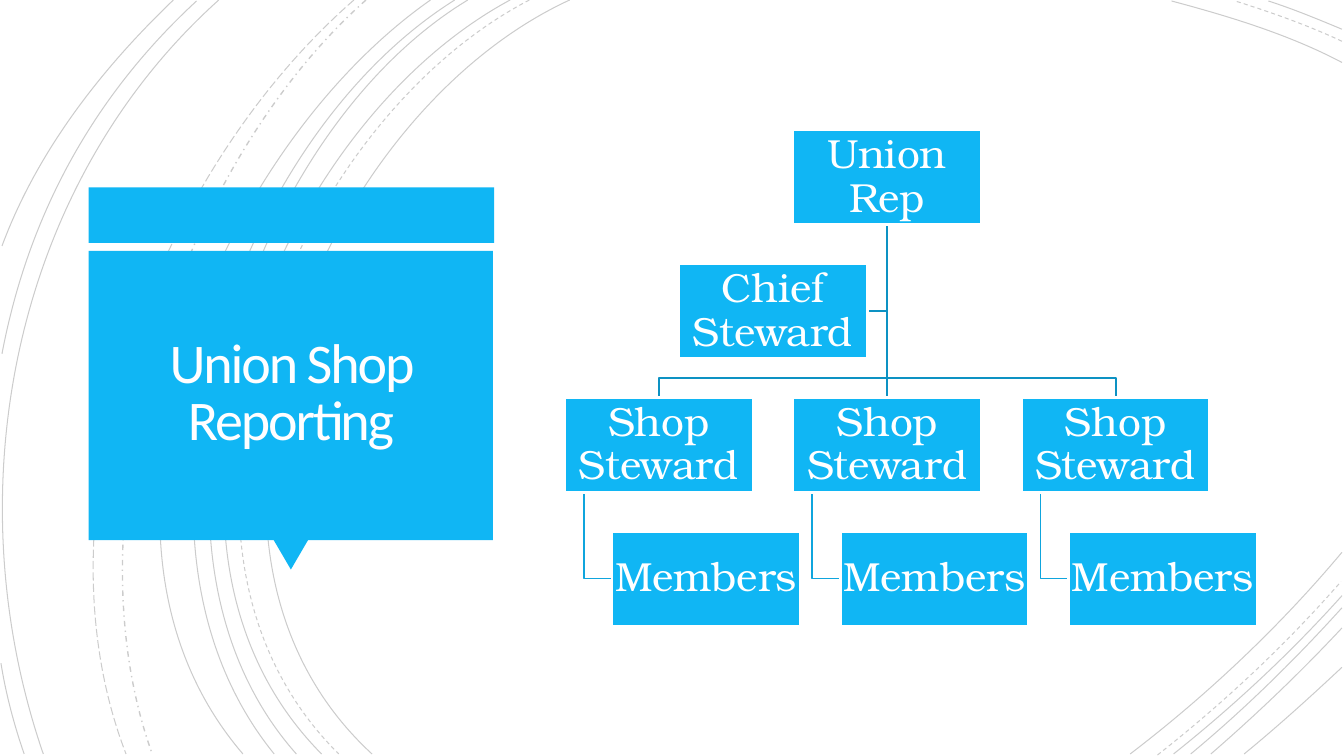
from dataclasses import dataclass

from lxml.etree import SubElement
from pptx import Presentation
from pptx.dml.color import RGBColor
from pptx.enum.dml import MSO_LINE
from pptx.enum.shapes import MSO_SHAPE
from pptx.enum.text import MSO_ANCHOR, MSO_AUTO_SIZE, PP_ALIGN
from pptx.oxml.ns import qn
from pptx.shapes.autoshape import Shape
from pptx.slide import Slide
from pptx.text.text import TextFrame
from pptx.util import Inches, Pt

SKY = RGBColor(0x10, 0xB6, 0xF4)
TRUNK = RGBColor(0x0D, 0x92, 0xC3)
BRANCH = RGBColor(0x0F, 0xA5, 0xDD)
WHITE = RGBColor(0xFF, 0xFF, 0xFF)
TITLE_WHITE = RGBColor(0xFF, 0xFE, 0xFF)
BLACK = RGBColor(0, 0, 0)

Point = tuple[float, float]

NODE_WIDTH, NODE_HEIGHT = 1.87, 0.94
CHART_LEFT, CHART_TOP = 5.6, 1.29
COLUMN_PITCH, ROW_PITCH = 4.53 / 2, 3.98 / 3
MEMBER_INDENT = 0.47


@dataclass(frozen=True)
class Arc:
    start: Point
    control_1: Point
    control_2: Point
    end: Point
    dash: MSO_LINE = MSO_LINE.SOLID
    weight: float = 0.75


@dataclass(frozen=True)
class Node:
    label: str
    left: float
    row: int

    @property
    def top(self) -> float:
        return CHART_TOP + self.row * ROW_PITCH

    @property
    def bottom(self) -> float:
        return self.top + NODE_HEIGHT

    @property
    def middle(self) -> Point:
        return self.left + NODE_WIDTH / 2, self.top + NODE_HEIGHT / 2


ARCS = [
    Arc((5.65, 0), (3.15, 1.15), (1.43, 5.4), (3.69, 7.48)),
    Arc((13.31, 0.62), (12.78, 0.34), (12.18, 0.16), (11.62, 0.01)),
    Arc((11.21, 7.48), (11.97, 6.9), (12.69, 6.22), (13.31, 5.48)),
    Arc((5.25, 0), (2.85, 1.25), (1.23, 5.37), (3.36, 7.48), MSO_LINE.DASH),
    Arc((13.31, 0.41), (12.97, 0.25), (12.6, 0.12), (12.25, 0.01), MSO_LINE.DASH),
    Arc((11.48, 7.49), (12.13, 6.98), (12.75, 6.4), (13.3, 5.77), MSO_LINE.DASH),
    Arc((5.06, 0), (2.7, 1.27), (1.1, 5.37), (3.19, 7.48)),
    Arc((13.31, 0.29), (13.07, 0.19), (12.83, 0.09), (12.58, 0.01)),
    Arc((11.64, 7.48), (12.23, 7.01), (12.8, 6.48), (13.31, 5.91)),
    Arc((4.64, 0), (2.44, 1.33), (1.1, 5.41), (2.94, 7.48)),
    Arc((11.81, 7.48), (12.34, 7.04), (12.84, 6.55), (13.31, 6.03)),
    Arc((4.51, 0), (2.31, 1.38), (0.97, 5.33), (2.72, 7.48)),
    Arc((12.01, 7.48), (12.46, 7.09), (12.9, 6.67), (13.31, 6.23)),
    Arc((4.27, 0), (2.17, 1.47), (0.53, 5.29), (2.41, 7.48)),
    Arc((12.34, 7.48), (12.67, 7.21), (12.99, 6.92), (13.31, 6.62)),
    Arc((3.63, 0), (1.76, 1.66), (0.65, 5.09), (1.51, 7.48), MSO_LINE.DASH_DOT, 1),
    Arc((3.51, 0), (1.57, 1.69), (0.29, 4.99), (1.25, 7.48), MSO_LINE.LONG_DASH),
    Arc((2.17, 0), (0.11, 1.85), (-0.46, 4.9), (0.43, 7.48)),
    Arc((1.95, 0.01), (0.92, 0.96), (0.28, 2.14), (0.02, 3.51)),
    Arc((0.01, 6.58), (0.06, 6.89), (0.14, 7.19), (0.24, 7.48)),
    Arc((1.72, 0), (1, 0.69), (0.37, 1.5), (0.02, 2.44)),
]


def draw_polyline(page: Slide, points: list[Point], color: RGBColor, weight: float) -> Shape:
    corners = [(Inches(x), Inches(y)) for x, y in points]
    builder = page.shapes.build_freeform(*corners[0])
    builder.add_line_segments(corners[1:], close=False)
    shape = builder.convert_to_shape()
    shape.shadow.inherit = False
    shape.fill.background()
    shape.line.color.rgb = color
    shape.line.width = Pt(weight)
    return shape


def bend_to_curve(shape: Shape) -> None:
    outline = next(shape._element.iter(qn("a:path")))
    segments = outline.findall(qn("a:lnTo"))
    curve = SubElement(outline, qn("a:cubicBezTo"))
    for segment in segments:
        curve.append(segment[0])
        outline.remove(segment)


def draw_arc(page: Slide, arc: Arc) -> None:
    points = [arc.start, arc.control_1, arc.control_2, arc.end]
    shape = draw_polyline(page, points, BLACK, arc.weight)
    bend_to_curve(shape)
    shape.line.dash_style = arc.dash
    line_color = shape.line._get_or_add_ln().find(f".//{qn('a:srgbClr')}")
    SubElement(line_color, qn("a:alpha"), val="20000")


def draw_block(
    page: Slide, kind: MSO_SHAPE, left: float, top: float, width: float, height: float
) -> Shape:
    shape = page.shapes.add_shape(kind, Inches(left), Inches(top), Inches(width), Inches(height))
    shape.shadow.inherit = False
    shape.fill.solid()
    shape.fill.fore_color.rgb = SKY
    shape.line.fill.background()
    return shape


def write_centred(
    frame: TextFrame, text: str, font: str, size: float, color: RGBColor, inset: float, spacing: float
) -> None:
    frame.text = text
    frame.word_wrap = True
    frame.auto_size = MSO_AUTO_SIZE.NONE
    frame.vertical_anchor = MSO_ANCHOR.MIDDLE
    frame.margin_left = frame.margin_right = Inches(inset)
    frame.margin_top = frame.margin_bottom = Inches(inset)
    para = frame.paragraphs[0]
    para.alignment = PP_ALIGN.CENTER
    para.line_spacing = spacing
    para.font.name = font
    para.font.size = Pt(size)
    para.font.color.rgb = color


def draw_node(page: Slide, node: Node) -> None:
    shape = draw_block(page, MSO_SHAPE.RECTANGLE, node.left, node.top, NODE_WIDTH, NODE_HEIGHT)
    shape.line.color.rgb = WHITE
    shape.line.width = Pt(2)
    write_centred(shape.text_frame, node.label, "TeX Gyre Bonum", 29, WHITE, 0.02, 0.9)


def draw_title(page: Slide) -> None:
    draw_block(page, MSO_SHAPE.RECTANGLE, 0.88, 1.86, 4.02, 0.55)
    draw_block(page, MSO_SHAPE.ISOSCELES_TRIANGLE, 2.71, 5.35, 0.35, 0.3).rotation = 180
    draw_block(page, MSO_SHAPE.RECTANGLE, 0.88, 2.49, 4.01, 2.87)
    title = page.shapes.title
    title.left, title.top = Inches(0.97), Inches(2.57)
    title.width, title.height = Inches(3.83), Inches(2.69)
    write_centred(title.text_frame, "Union Shop Reporting", "Calibri", 40, TITLE_WHITE, 0.25, 0.85)
    span = title.text_frame.paragraphs[0].runs[0]
    span.font._element.set("spc", "-150")
    page.shapes._spTree.append(title._element)


def draw_organisation(page: Slide) -> None:
    columns = [CHART_LEFT + index * COLUMN_PITCH for index in range(3)]
    rep = Node("Union Rep", columns[1], 0)
    chief = Node("Chief Steward", columns[1] - COLUMN_PITCH / 2, 1)
    stewards = [Node("Shop Steward", left, 2) for left in columns]
    members = [Node("Members", left + MEMBER_INDENT, 3) for left in columns]
    teams = list(zip(stewards, members))

    trunk_x = rep.middle[0]
    chief_y = chief.middle[1]
    rail_y = stewards[0].top - 0.19
    chief_route = [(trunk_x, rep.bottom), (trunk_x, chief_y), (chief.left + NODE_WIDTH, chief_y)]
    draw_polyline(page, chief_route, TRUNK, 1.25)
    for steward, member in reversed(teams):
        stem_x, member_y = steward.left + 0.19, member.middle[1]
        drop = [(stem_x, steward.bottom), (stem_x, member_y), (member.left, member_y)]
        draw_polyline(page, drop, BRANCH, 1.25)
        x = steward.middle[0]
        rail = [] if x == trunk_x else [(trunk_x, rail_y), (x, rail_y)]
        draw_polyline(page, [(trunk_x, rep.bottom), *rail, (x, steward.top)], TRUNK, 1.25)

    draw_node(page, rep)
    for steward, member in teams:
        draw_node(page, steward)
        draw_node(page, member)
    draw_node(page, chief)


def main() -> None:
    deck = Presentation()
    deck.slide_width, deck.slide_height = Inches(13.33), Inches(7.5)
    page = deck.slides.add_slide(deck.slide_layouts.get_by_name("Title Only"))
    for arc in ARCS:
        draw_arc(page, arc)
    draw_title(page)
    draw_organisation(page)
    deck.save("out.pptx")


if __name__ == "__main__":
    main()
